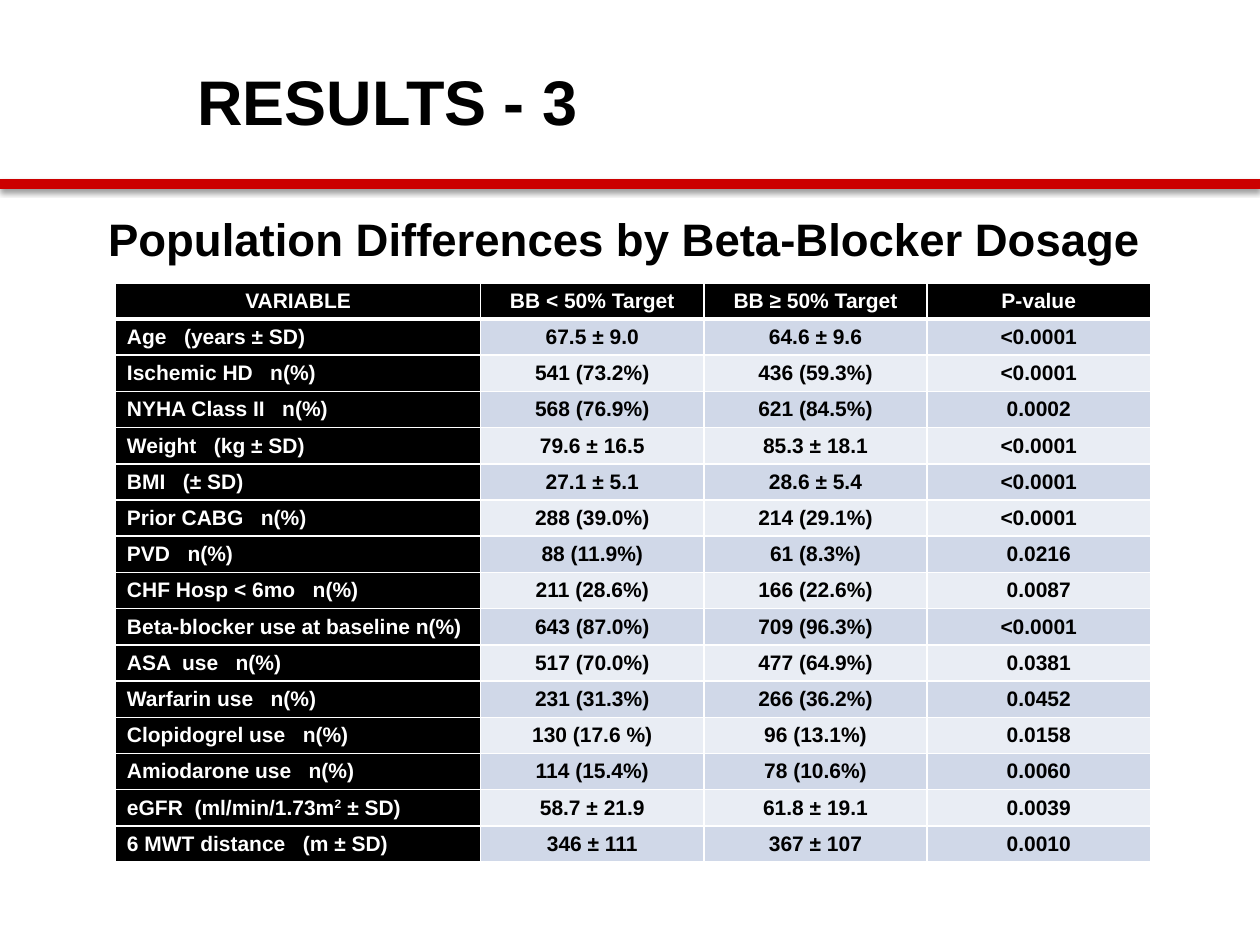
import pptx
import pptx.dml.color
import pptx.enum.shapes
import pptx.enum.text
import pptx.oxml
import pptx.oxml.ns
import pptx.util

Cm = pptx.util.Cm
Pt = pptx.util.Pt
ALIGN = pptx.enum.text.PP_ALIGN
MIDDLE = pptx.enum.text.MSO_ANCHOR.MIDDLE
COLORS = {
    "black": "000000",
    "white": "FFFFFF",
    "red": "CC0000",
    "band_dark": "D0D8E8",
    "band_light": "E9EDF4",
}
DRAWING_NS = pptx.oxml.ns.nsdecls("a")


def write(frame, text, size, color="black", align=ALIGN.LEFT):
    """Fill a text frame with one bold paragraph; text between ^ marks is superscript."""
    frame.word_wrap = True
    paragraph = frame.paragraphs[0]
    paragraph.alignment = align
    for index, part in enumerate(text.split("^")):
        run = paragraph.add_run()
        run.text = part
        run.font.name = "Arial"
        run.font.size = Pt(size)
        run.font.bold = True
        run.font.color.rgb = pptx.dml.color.RGBColor.from_string(COLORS[color])
        if index % 2:
            run.font._element.set("baseline", "30000")


def add_border(cell, side, points):
    cell._tc.get_or_add_tcPr().append(pptx.oxml.parse_xml(
        f'<a:{side} {DRAWING_NS} w="{Pt(points)}"><a:solidFill>'
        f'<a:srgbClr val="{COLORS["white"]}"/></a:solidFill></a:{side}>'))


presentation = pptx.Presentation()
presentation.slide_width = Cm(25.4)
presentation.slide_height = Cm(19.05)
slide = presentation.slides.add_slide(presentation.slide_layouts[6])

# Red rule under the title
rule = slide.shapes.add_connector(
    pptx.enum.shapes.MSO_CONNECTOR.STRAIGHT, 0, Cm(3.71), Cm(25.4), Cm(3.71))
rule.line.width = Pt(6)
rule.line.color.rgb = pptx.dml.color.RGBColor.from_string(COLORS["red"])
rule._element.spPr.append(pptx.oxml.parse_xml(
    f'<a:effectLst {DRAWING_NS}><a:outerShdw blurRad="{Pt(3.1)}" dist="{Pt(1.6)}" '
    f'dir="5400000" rotWithShape="0"><a:srgbClr val="{COLORS["black"]}">'
    '<a:alpha val="38000"/></a:srgbClr></a:outerShdw></a:effectLst>'))

# Headings
headings = [
    ("Population Differences by Beta-Blocker Dosage", 26, (1.93, 3.66, 24.61, 2.29)),
    ("RESULTS - 3", 36, (3.73, 0.43, 17.48, 3.18)),
]
for text, size, box in headings:
    heading = slide.shapes.add_textbox(*[Cm(length) for length in box])
    heading.text_frame.vertical_anchor = MIDDLE
    write(heading.text_frame, text, size)

# Population table
population = [
    ("VARIABLE", "BB < 50% Target", "BB ≥ 50% Target", "P-value"),
    ("Age   (years ± SD)", "67.5 ± 9.0", "64.6 ± 9.6", "<0.0001"),
    ("Ischemic HD   n(%)", "541 (73.2%)", "436 (59.3%)", "<0.0001"),
    ("NYHA Class II   n(%)", "568 (76.9%)", "621 (84.5%)", "0.0002"),
    ("Weight   (kg ± SD)", "79.6 ± 16.5", "85.3 ± 18.1", "<0.0001"),
    ("BMI   (± SD)", "27.1 ± 5.1", "28.6 ± 5.4", "<0.0001"),
    ("Prior CABG   n(%)", "288 (39.0%)", "214 (29.1%)", "<0.0001"),
    ("PVD   n(%)", "88 (11.9%)", "61 (8.3%)", "0.0216"),
    ("CHF Hosp < 6mo   n(%)", "211 (28.6%)", "166 (22.6%)", "0.0087"),
    ("Beta-blocker use at baseline n(%)", "643 (87.0%)", "709 (96.3%)", "<0.0001"),
    ("ASA  use   n(%)", "517 (70.0%)", "477 (64.9%)", "0.0381"),
    ("Warfarin use   n(%)", "231 (31.3%)", "266 (36.2%)", "0.0452"),
    ("Clopidogrel use   n(%)", "130 (17.6 %)", "96 (13.1%)", "0.0158"),
    ("Amiodarone use   n(%)", "114 (15.4%)", "78 (10.6%)", "0.0060"),
    ("eGFR  (ml/min/1.73m^2^ ± SD)", "58.7 ± 21.9", "61.8 ± 19.1", "0.0039"),
    ("6 MWT distance   (m ± SD)", "346 ± 111", "367 ± 107", "0.0010"),
]
column_widths = [7.36, 4.5, 4.5, 4.5]
row_height = 0.73
table = slide.shapes.add_table(
    len(population), len(column_widths), Cm(2.33), Cm(5.7),
    Cm(sum(column_widths)), Cm(row_height * len(population))).table
table.horz_banding = False
table.first_col = True
for column, width in zip(table.columns, column_widths):
    column.width = Cm(width)

for row, values in enumerate(population):
    table.rows[row].height = Cm(row_height)
    for col, value in enumerate(values):
        cell = table.cell(row, col)
        is_label = row == 0 or col == 0
        cell.vertical_anchor = MIDDLE
        cell.margin_left = cell.margin_right = Cm(0.23)
        cell.margin_top = cell.margin_bottom = Cm(0.11)
        write(cell.text_frame, value, 12,
              color="white" if is_label else "black",
              align=ALIGN.LEFT if row and col == 0 else ALIGN.CENTER)
        add_border(cell, "lnL", 1)
        add_border(cell, "lnR", 1)
        add_border(cell, "lnT", 3 if row == 1 else 1)
        add_border(cell, "lnB", 3 if row == 0 else 1)
        fill = "black" if is_label else "band_dark" if row % 2 else "band_light"
        cell.fill.solid()
        cell.fill.fore_color.rgb = pptx.dml.color.RGBColor.from_string(COLORS[fill])

presentation.save("out.pptx")
